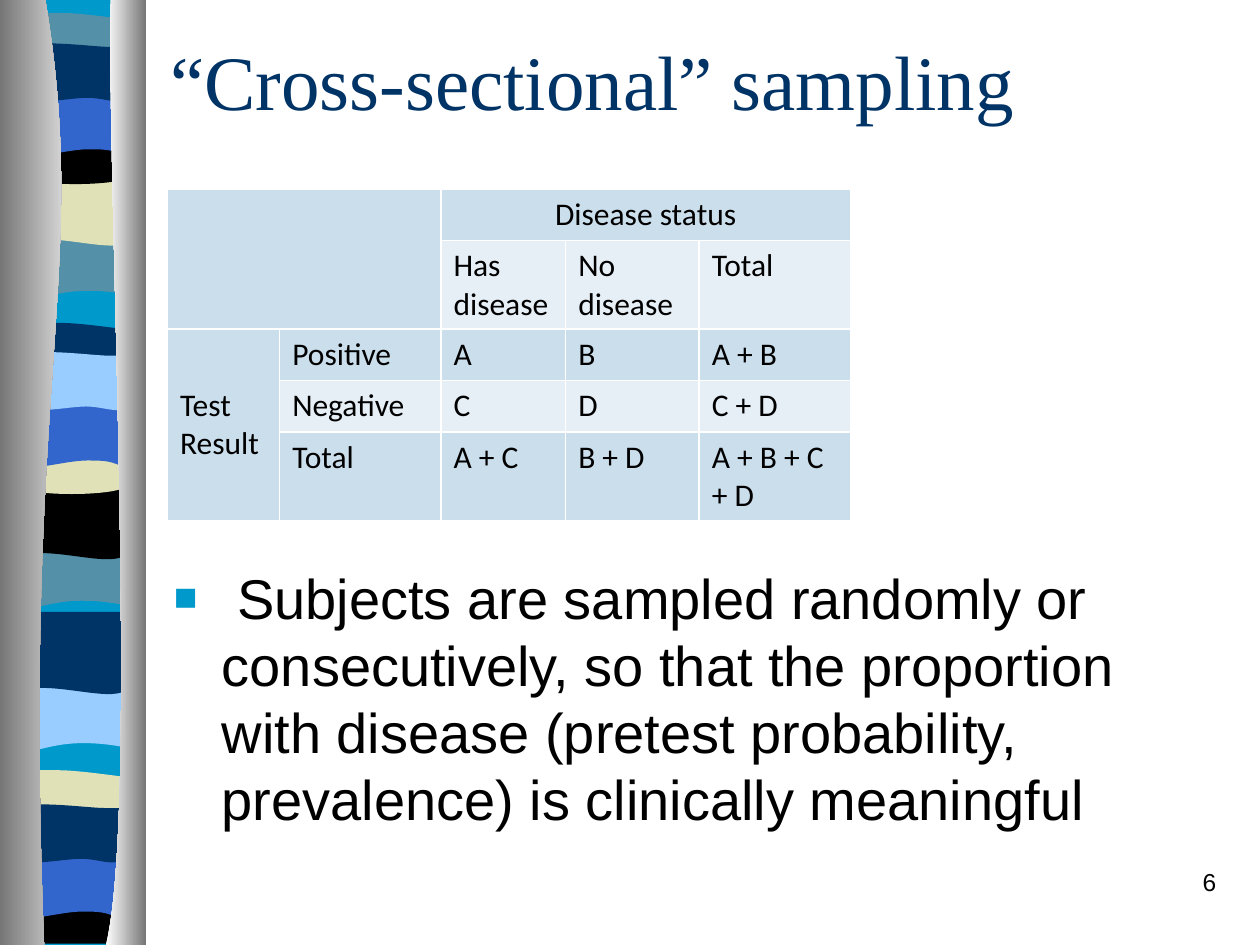
from lxml.etree import SubElement
from pptx import Presentation
from pptx.dml.color import RGBColor
from pptx.enum.text import MSO_ANCHOR, MSO_AUTO_SIZE, PP_ALIGN
from pptx.oxml.ns import qn
from pptx.util import Inches, Pt

NAVY = RGBColor(0x00, 0x33, 0x66)
CYAN = RGBColor(0x00, 0x99, 0xCC)
TEAL = RGBColor(0x54, 0x90, 0xA8)
SAND = RGBColor(0xE1, 0xE1, 0xB7)
BLUE = RGBColor(0x33, 0x66, 0xCC)
SKY = RGBColor(0x99, 0xCC, 0xFF)
BLACK = RGBColor(0x00, 0x00, 0x00)
WHITE = RGBColor(0xFF, 0xFF, 0xFF)
GRAY = RGBColor(0x76, 0x76, 0x76)
DARK_CELL = RGBColor(0xCB, 0xDE, 0xEC)
LIGHT_CELL = RGBColor(0xE7, 0xEF, 0xF6)

STRETCH = 1.3
BACKDROP = [(0.84, 0), (0.84, 7.5), (0, 7.5), (0, 0)]
FLOOR = [(0.83, 0), (0.83, 0.37), (0, 0.37), (0, 0), (0.51, 0.05, 0.65, 0, 0.83, 0)]
WAVE = [(1.08, 0), (1.08, 0.47), (0.33, 0.39, 0.18, 0.55, 0, 0.47), (0, 0)]
SWELL = [(1.08, 0), (1.08, 0.48), (0.9, 0.55, 0.33, 0.42, 0, 0.48), (0, 0)]
LENS = [(1.08, 0.05), (1.08, 0.29), (0.9, 0.33, 0.18, 0.33, 0, 0.29), (0, 0.05),
        (0.07, 0, 0.23, 0.01, 0.41, 0.01), (0.59, 0.01, 0.94, 0.04, 1.08, 0.05)]
BOWL = [(1.08, 0), (1.08, 0.33), (0.9, 0.38, 0.18, 0.38, 0, 0.33), (0, 0),
        (0.66, 0.05, 0.85, 0, 1.08, 0)]
ARCH = [(1.08, 0), (1.08, 0.47), (0.92, 0.42, 0.85, 0.42, 0.67, 0.42),
        (0.49, 0.42, 0.17, 0.47, 0, 0.47), (0, 0)]
RIPPLE = [(1.08, 0.05), (1.08, 0.36), (1.01, 0.41, 0.84, 0.36, 0.66, 0.36),
          (0.48, 0.36, 0.11, 0.41, 0, 0.36), (0, 0.05), (0.15, 0, 0.73, 0.05, 0.91, 0.05),
          (1.09, 0.05, 1.05, 0.05, 1.08, 0.05)]
LEFT_EDGE = [(0.36, 0), (0.72, 2.17, 0.17, 2.97, 0.35, 7.5), (0, 7.5), (0, 0)]
RIGHT_EDGE = [(0.88, 0), (0.84, 1.26, 1.11, 6.47, 0.84, 7.5), (1.16, 7.5), (1.16, 0)]

BANDS = [
    (BACKDROP, 0.19, 0, CYAN, 1),
    (WAVE, 0.06, 1.81, TEAL, STRETCH), (SWELL, 0.06, 1.38, SAND, STRETCH),
    (LENS, 0.06, 0.14, TEAL, STRETCH), (BOWL, 0.06, 1.04, BLACK, STRETCH),
    (ARCH, 0.06, 0.71, BLUE, STRETCH), (RIPPLE, 0.06, 0.37, NAVY, STRETCH),
    (WAVE, 0.01, 4.27, TEAL, STRETCH), (SWELL, 0.03, 3.87, BLACK, STRETCH),
    (LENS, 0.05, 2.6, NAVY, STRETCH), (BOWL, 0.03, 3.5, SAND, STRETCH),
    (ARCH, 0.05, 3.18, BLUE, STRETCH), (RIPPLE, 0.05, 2.82, SKY, STRETCH),
    (WAVE, 0.02, 5.4, SKY, STRETCH), (SWELL, 0.04, 4.94, NAVY, STRETCH),
    (LENS, 0.03, 6.15, SAND, STRETCH), (FLOOR, 0.15, 7.12, BLACK, 1),
    (ARCH, 0.01, 6.76, BLUE, STRETCH), (RIPPLE, 0.01, 6.41, NAVY, STRETCH),
]

TABLE_ROWS = [
    ["", "", "Disease status", "", ""],
    ["", "", "Has disease", "No disease", "Total"],
    ["Test Result", "Positive", "A", "B", "A + B"],
    ["", "Negative", "C", "D", "C + D"],
    ["", "Total", "A + C", "B + D", "A + B + C + D"],
]
MERGES = [((0, 0), (1, 1)), ((0, 2), (0, 4)), ((2, 0), (4, 0))]


def add_outline(group, outline, left, top, stretch=1):
    """Add a closed outline of lines and cubic curves, made taller and narrower by stretch."""
    pairs = [pair for segment in outline for pair in zip(segment[::2], segment[1::2])]
    middle_x = max(x for x, y in pairs) / 2
    middle_y = max(y for x, y in pairs) / 2
    points = [(left + Inches(middle_x + (x - middle_x) / stretch),
               top + Inches(middle_y + (y - middle_y) * stretch)) for x, y in pairs]
    builder = group.shapes.build_freeform(*points[0])
    builder.add_line_segments(points[1:], close=True)
    shape = builder.convert_to_shape()
    lines = iter(list(shape.element.iter(qn("a:lnTo"))))
    for segment in outline[1:]:
        line = next(lines)
        if len(segment) == 6:
            curve = line.makeelement(qn("a:cubicBezTo"), {})
            line.addprevious(curve)
            for part in (line, next(lines), next(lines)):
                curve.append(part[0])
                part.getparent().remove(part)
    shape.shadow.inherit = False
    shape.line.fill.background()
    return shape


def add_ribbon(presentation, slide, left, top):
    """Place the coloured ribbon and its two shaded edges on the slide master."""
    group = slide.shapes.add_group_shape()
    for outline, x, y, color, stretch in BANDS:
        shape = add_outline(group, outline, left + Inches(x), top + Inches(y), stretch)
        shape.fill.solid()
        shape.fill.fore_color.rgb = color
    for outline, colors in ((LEFT_EDGE, (GRAY, WHITE)), (RIGHT_EDGE, (WHITE, GRAY))):
        fill = add_outline(group, outline, left, top).fill
        fill.gradient()
        fill.gradient_angle = 0
        for stop, color, position in zip(fill.gradient_stops, colors, (0, 1)):
            stop.color.rgb = color
            stop.position = position
    presentation.slide_master.shapes[0].element.addprevious(group.element)


def place(shape, left, top, width, height):
    """Move and size a shape."""
    shape.left, shape.top, shape.width, shape.height = left, top, width, height


def set_text(text_frame, text, font_name, size, color=BLACK, alignment=PP_ALIGN.LEFT):
    """Write one formatted paragraph and return it."""
    text_frame.text = text
    paragraph = text_frame.paragraphs[0]
    paragraph.alignment = alignment
    for run in paragraph.runs:
        run.font.name = font_name
        run.font.size = Pt(size)
        run.font.color.rgb = color
    return paragraph


def add_title(slide, left, top, width, height):
    """Fill the title placeholder."""
    title = slide.shapes.title
    place(title, left, top, width, height)
    set_text(title.text_frame, "“Cross-sectional” sampling", "Times New Roman", 44, NAVY)
    title.text_frame.vertical_anchor = MSO_ANCHOR.MIDDLE
    title.text_frame.auto_size = MSO_AUTO_SIZE.NONE


def add_body(slide, left, top, width, height):
    """Fill the body placeholder with one square-bulleted paragraph."""
    body = slide.placeholders[1]
    place(body, left, top, width, height)
    text = (" Subjects are sampled randomly or consecutively, so that the proportion "
            "with disease (pretest probability, prevalence) is clinically meaningful")
    paragraph = set_text(body.text_frame, text, "Arial", 32)
    body.text_frame.auto_size = MSO_AUTO_SIZE.NONE
    properties = paragraph._p.get_or_add_pPr()
    properties.set("marL", str(Inches(0.38)))
    properties.set("indent", str(-Inches(0.38)))
    bullet_color = SubElement(properties, qn("a:buClr"))
    SubElement(bullet_color, qn("a:srgbClr"), val=str(CYAN))
    SubElement(properties, qn("a:buSzPct"), val="70000")
    SubElement(properties, qn("a:buFont"), typeface="Arial")
    SubElement(properties, qn("a:buChar"), char="■")


def add_borders(cell):
    """Draw white one-point borders around a cell."""
    properties = cell._tc.get_or_add_tcPr()
    for index, side in enumerate(("a:lnL", "a:lnR", "a:lnT", "a:lnB")):
        line = properties.makeelement(qn(side), {"w": str(Pt(1))})
        SubElement(SubElement(line, qn("a:solidFill")), qn("a:srgbClr"), val=str(WHITE))
        properties.insert(index, line)


def add_status_table(slide, left, top, width, height):
    """Add the table of test result against disease status."""
    table = slide.shapes.add_table(5, 5, left, top, width, height).table
    for column, column_width in zip(table.columns, (0.89, 1.28, 0.99, 1.06, 1.2)):
        column.width = Inches(column_width)
    for row, row_height in zip(table.rows, (0.41, 0.7, 0.41, 0.41, 0.7)):
        row.height = Inches(row_height)
    for row_index, texts in enumerate(TABLE_ROWS):
        for column_index, text in enumerate(texts):
            cell = table.cell(row_index, column_index)
            set_text(cell.text_frame, text, "Calibri", 18)
            cell.fill.solid()
            cell.fill.fore_color.rgb = LIGHT_CELL if row_index % 2 else DARK_CELL
            add_borders(cell)
    for first, last in MERGES:
        table.cell(*first).merge(table.cell(*last))
    table.cell(0, 2).text_frame.paragraphs[0].alignment = PP_ALIGN.CENTER
    table.cell(2, 0).vertical_anchor = MSO_ANCHOR.MIDDLE


def add_slide_number(slide, left, top, width, height):
    """Add the slide number at the lower right."""
    text_frame = slide.shapes.add_textbox(left, top, width, height).text_frame
    text_frame.word_wrap = True
    set_text(text_frame, "6", "Arial", 14, alignment=PP_ALIGN.RIGHT)


def main():
    """Build and save the slide."""
    presentation = Presentation()
    presentation.slide_width, presentation.slide_height = Inches(10), Inches(7.5)
    slide = presentation.slides.add_slide(presentation.slide_layouts[1])
    add_ribbon(presentation, slide, Inches(0), Inches(0))
    add_title(slide, Inches(1.25), Inches(0.17), Inches(8.5), Inches(0.92))
    add_slide_number(slide, Inches(7.67), Inches(6.83), Inches(2.08), Inches(0.5))
    add_status_table(slide, Inches(1.33), Inches(1.5), Inches(5.42), Inches(2.62))
    add_body(slide, Inches(1.28), Inches(4.42), Inches(8.5), Inches(2.25))
    presentation.save("out.pptx")


if __name__ == "__main__":
    main()
